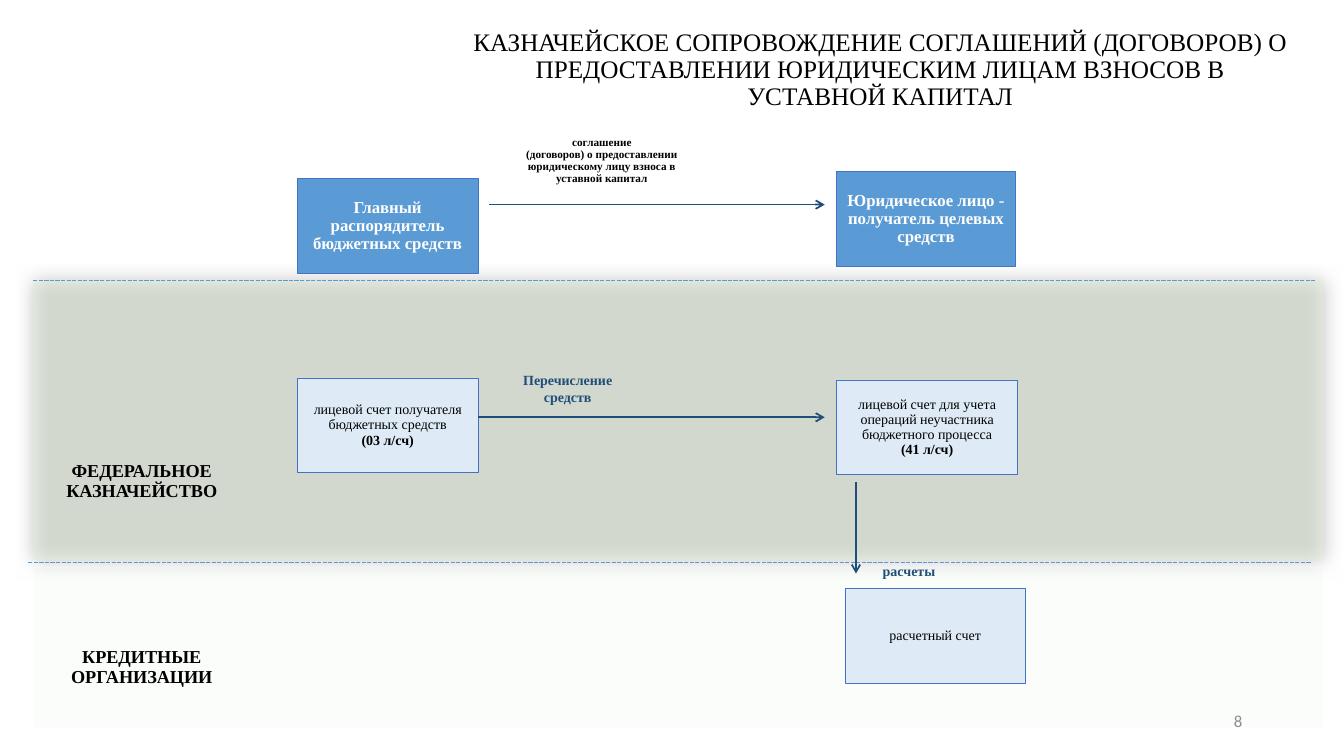
from lxml import etree
from pptx import Presentation
from pptx.dml.color import RGBColor
from pptx.enum.dml import MSO_LINE
from pptx.enum.shapes import MSO_CONNECTOR, MSO_SHAPE
from pptx.enum.text import MSO_ANCHOR, MSO_AUTO_SIZE, PP_ALIGN
from pptx.oxml.ns import qn
from pptx.util import Inches, Pt

STRAIGHT = MSO_CONNECTOR.STRAIGHT
RECTANGLE = MSO_SHAPE.RECTANGLE
DASHED = MSO_LINE.SQUARE_DOT
TOP, MIDDLE = MSO_ANCHOR.TOP, MSO_ANCHOR.MIDDLE
CENTER, RIGHT = PP_ALIGN.CENTER, PP_ALIGN.RIGHT
GROW = MSO_AUTO_SIZE.SHAPE_TO_FIT_TEXT

BLACK = RGBColor(0x00, 0x00, 0x00)
WHITE = RGBColor(0xFF, 0xFF, 0xFF)
GRAY = RGBColor(0x8C, 0x8C, 0x8C)
BLUE = RGBColor(0x5B, 0x9B, 0xD5)
PALE_BLUE = RGBColor(0xDE, 0xEB, 0xF7)
BORDER = RGBColor(0x44, 0x72, 0xC4)
NAVY = RGBColor(0x1F, 0x4E, 0x79)
PALE_GREEN = RGBColor(0xE2, 0xF0, 0xD9)

SERIF, SANS = "Times New Roman", "Calibri"


def write(frame, text, size=10, color=BLACK, bold=False, bold_last=False, font=SERIF,
          align=CENTER, anchor=MIDDLE, spacing=0.9, inset=None):
    """Fill a text frame, one paragraph per line of text."""
    frame.word_wrap = True
    frame.vertical_anchor = anchor
    side, edge = (0.1, 0.05) if inset is None else (inset, inset)
    frame.margin_left = frame.margin_right = Inches(side)
    frame.margin_top = frame.margin_bottom = Inches(edge)
    lines = text.split("\n")
    for index, line in enumerate(lines):
        para = frame.paragraphs[0] if index == 0 else frame.add_paragraph()
        para.alignment = align
        para.line_spacing = spacing
        para.space_before = para.space_after = Pt(0)
        span = para.add_run()
        span.text = line
        span.font.name = font
        span.font.size = Pt(size)
        span.font.bold = bold or (bold_last and index == len(lines) - 1)
        span.font.color.rgb = color


class FlowSlide:
    """Draws the elements of a fund flow diagram on one slide."""

    def __init__(self, deck):
        self.page = deck.slides.add_slide(deck.slide_layouts[5])
        self.shapes = self.page.shapes

    def title(self, text, left, top, width, height):
        box = self.shapes.title
        box.left, box.top = Inches(left), Inches(top)
        box.width, box.height = Inches(width), Inches(height)
        write(box.text_frame, text, size=18, anchor=TOP)
        box.text_frame.auto_size = GROW

    def rectangle(self, left, top, width, height, fill):
        box = self.shapes.add_shape(
            RECTANGLE, Inches(left), Inches(top), Inches(width), Inches(height))
        box.shadow.inherit = False
        box.fill.solid()
        box.fill.fore_color.rgb = fill
        return box

    def band(self, top, height, opacity, shaded=False):
        box = self.rectangle(0.33, top, 12.79, height, PALE_GREEN)
        box.line.fill.background()
        properties = box.element.spPr
        color = properties.find(qn("a:solidFill"))[0]
        etree.SubElement(color, qn("a:alpha"), val=str(opacity * 1000))
        if shaded:
            effects = properties.find(qn("a:effectLst"))
            shadow = etree.SubElement(effects, qn("a:outerShdw"), algn="ctr", rotWithShape="0",
                                      blurRad=str(Inches(0.2)), dist="0", dir="0")
            black = etree.SubElement(shadow, qn("a:srgbClr"), val=str(BLACK))
            etree.SubElement(black, qn("a:alpha"), val="50000")

    def card(self, text, left, top, fill=PALE_BLUE, width=1.79, **style):
        box = self.rectangle(left, top, width, 0.94, fill)
        box.line.color.rgb = BORDER
        box.line.width = Pt(0.5)
        write(box.text_frame, text, inset=0.01, **style)

    def label(self, text, left, top, width, height, **style):
        box = self.shapes.add_textbox(
            Inches(left), Inches(top), Inches(width), Inches(height))
        write(box.text_frame, text, **style)

    def line(self, start, end, color, width):
        line = self.shapes.add_connector(STRAIGHT, *map(Inches, start + end))
        line.line.color.rgb = color
        line.line.width = Pt(width)
        etree.SubElement(line.element.spPr, qn("a:effectLst"))
        return line

    def arrow(self, start, end):
        line = self.line(start, end, NAVY, 1.25)
        etree.SubElement(line.line._get_or_add_ln(), qn("a:tailEnd"), type="arrow")

    def border(self, left, right, height):
        self.line((left, height), (right, height), BLUE, 1).line.dash_style = DASHED


def main():
    deck = Presentation()
    deck.slide_width, deck.slide_height = Inches(13.33), Inches(7.5)
    slide = FlowSlide(deck)

    slide.band(5.64, 1.58, 12)
    slide.band(2.78, 2.78, 45, shaded=True)
    slide.title("КАЗНАЧЕЙСКОЕ СОПРОВОЖДЕНИЕ СОГЛАШЕНИЙ (ДОГОВОРОВ) О ПРЕДОСТАВЛЕНИИ "
                "ЮРИДИЧЕСКИМ ЛИЦАМ ВЗНОСОВ В УСТАВНОЙ КАПИТАЛ", 4.53, 0.24, 8.4, 0.92)
    slide.label("8", 9.42, 6.95, 3, 0.4, size=12, color=GRAY, font=SANS, align=RIGHT, spacing=1)

    for text, top in (("ФЕДЕРАЛЬНОЕ КАЗНАЧЕЙСТВО", 4.24), ("КРЕДИТНЫЕ ОРГАНИЗАЦИИ", 6.09)):
        slide.label(text, 0.33, top, 2.15, 1.07, size=13, bold=True, inset=0.01)

    party = {"fill": BLUE, "size": 12, "color": WHITE, "bold": True}
    slide.card("Главный распорядитель бюджетных средств", 2.95, 1.77, **party)
    slide.card("Юридическое лицо - получатель целевых средств", 8.3, 1.7, width=1.77, **party)
    slide.card("лицевой счет получателя бюджетных средств\n(03 л/сч)", 2.95, 3.75, bold_last=True)
    slide.card("лицевой счет для учета операций неучастника бюджетного процесса\n(41 л/сч)",
               8.3, 3.77, bold_last=True)
    slide.card("расчетный счет", 8.38, 5.84)

    slide.border(0.33, 13.04, 2.78)
    slide.border(0.28, 13, 5.58)
    slide.arrow((4.85, 2.03), (8.18, 2.03))
    slide.arrow((4.74, 4.14), (8.18, 4.14))
    slide.arrow((8.49, 4.78), (8.49, 5.69))

    slide.label("соглашение\n(договоров) о предоставлении юридическому лицу взноса в "
                "уставной капитал", 4.97, 1.27, 2, 0.66, size=8, bold=True)
    transfer = {"color": NAVY, "bold": True, "spacing": 1}
    slide.label("Перечисление средств", 4.97, 3.75, 1.32, 0.21, **transfer)
    slide.label("расчеты", 8.49, 5.56, 1.05, 0.21, **transfer)

    deck.save("out.pptx")


if __name__ == "__main__":
    main()
